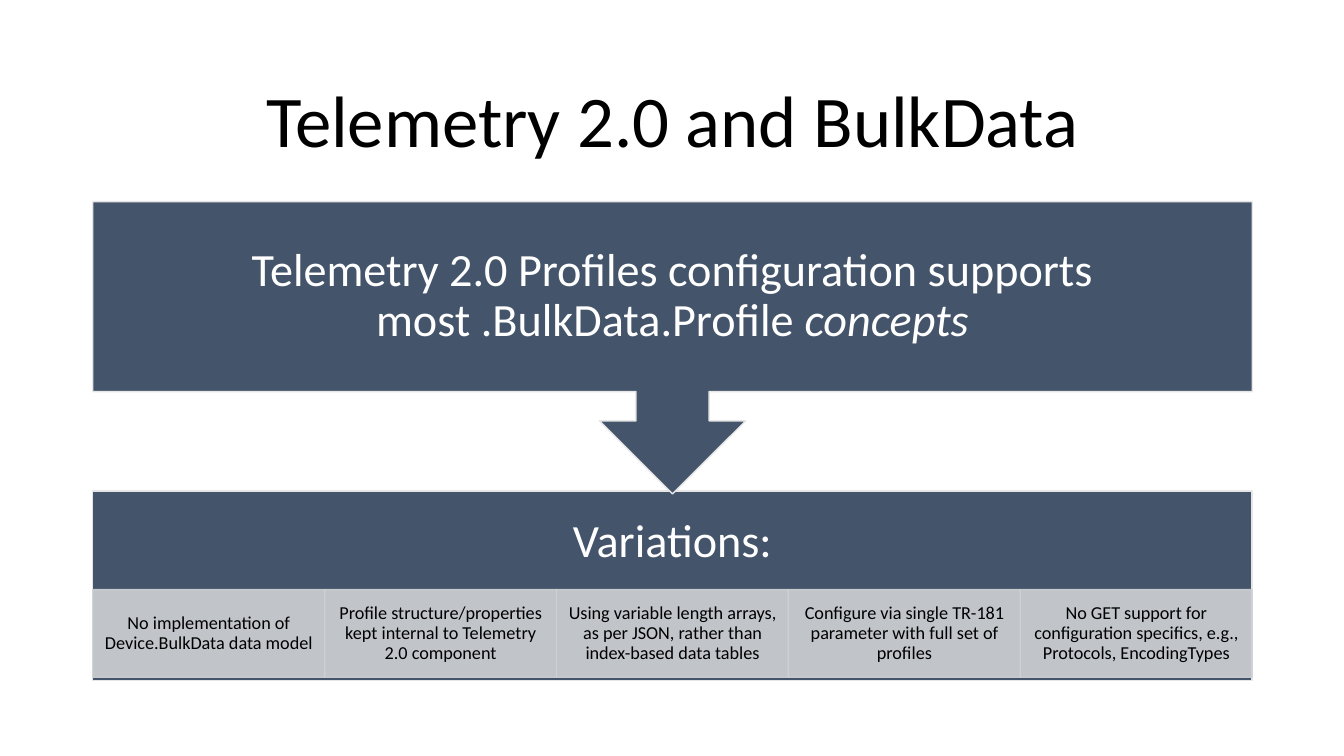
import pptx
import pptx.dml.color
import pptx.enum.shapes
import pptx.enum.text
import pptx.oxml
import pptx.oxml.ns
import pptx.util
from pptx.util import Inches

COLORS = {
    "title": "000000",
    "panel": "44546A",
    "panel_line": "E7E6E6",
    "panel_text": "FFFFFF",
    "cell": "CFD1D4",
    "cell_text": "000000",
}
FONT = "Calibri"
VARIATIONS = [
    "No implementation of Device.BulkData data model",
    "Profile structure/properties kept internal to Telemetry 2.0 component",
    "Using variable length arrays, as per JSON, rather than index-based data tables",
    "Configure via single TR-181 parameter with full set of profiles",
    "No GET support for configuration specifics, e.g., Protocols, EncodingTypes",
]


def color(name):
    return pptx.dml.color.RGBColor.from_string(COLORS[name])


def set_opacity(color_format_owner, percent):
    """Add an alpha value to every solid colour below the given XML element."""
    for element in color_format_owner.iter(pptx.oxml.ns.qn("a:srgbClr")):
        alpha = pptx.oxml.parse_xml(
            f'<a:alpha {pptx.oxml.ns.nsdecls("a")} val="{percent * 1000}"/>')
        element.append(alpha)


def add_panel(slide, kind, box, fill, line):
    shape = slide.shapes.add_shape(kind, *map(Inches, box))
    shape.shadow.inherit = False
    shape.fill.solid()
    shape.fill.fore_color.rgb = color(fill)
    shape.line.color.rgb = color(line)
    shape.line.width = pptx.util.Pt(1)
    return shape


def add_text(slide, box, runs, size, text_color, insets=(0.1, 0.05)):
    """Add centred text from (text, italic) runs; insets are (sides, top and bottom)."""
    frame = slide.shapes.add_textbox(*map(Inches, box)).text_frame
    frame.word_wrap = True
    frame.vertical_anchor = pptx.enum.text.MSO_ANCHOR.MIDDLE
    frame.margin_left = frame.margin_right = Inches(insets[0])
    frame.margin_top = frame.margin_bottom = Inches(insets[1])
    paragraph = frame.paragraphs[0]
    paragraph.alignment = pptx.enum.text.PP_ALIGN.CENTER
    paragraph.line_spacing = 0.9
    for text, italic in runs:
        run = paragraph.add_run()
        run.text = text
        run.font.name = FONT
        run.font.size = pptx.util.Pt(size)
        run.font.color.rgb = color(text_color)
        if italic:
            run.font.italic = True


def add_variations(slide, left, top, width, height):
    add_panel(slide, pptx.enum.shapes.MSO_SHAPE.RECTANGLE,
              (left, top, width, height), "panel", "panel_line")
    add_text(slide, (left, top, width, 1.02), [("Variations:", False)],
             33, "panel_text", (0.26, 0.26))
    cell_width = width / len(VARIATIONS)
    for index, variation in enumerate(VARIATIONS):
        box = (left + index * cell_width, top + 0.98, cell_width, 0.87)
        cell = add_panel(slide, pptx.enum.shapes.MSO_SHAPE.RECTANGLE,
                         box, "cell", "cell")
        set_opacity(cell.element.spPr, 90)
        add_text(slide, box, [(variation, False)], 13, "cell_text", (0.1, 0.02))


def add_support_callout(slide, left, top, width, height):
    callout = add_panel(slide, pptx.enum.shapes.MSO_SHAPE.UP_ARROW_CALLOUT,
                        (left, top, width, height), "panel", "panel_line")
    callout.rotation = 180
    runs = [("Telemetry 2.0 Profiles configuration supports most .BulkData.Profile ", False),
            ("concepts", True)]
    add_text(slide, (left, top, width, height * 0.65), runs,
             33, "panel_text", (1.2, 0.26))


def main():
    presentation = pptx.Presentation()
    presentation.slide_width = Inches(13.33)
    presentation.slide_height = Inches(7.5)
    slide = presentation.slides.add_slide(presentation.slide_layouts[6])
    left, width = 0.92, 11.5
    add_text(slide, (left, 0.61, width, 1.24),
             [("Telemetry 2.0 and BulkData", False)], 52, "title")
    add_variations(slide, left, 4.87, width, 1.88)
    add_support_callout(slide, left, 2, width, 2.9)
    presentation.save("out.pptx")


if __name__ == "__main__":
    main()
